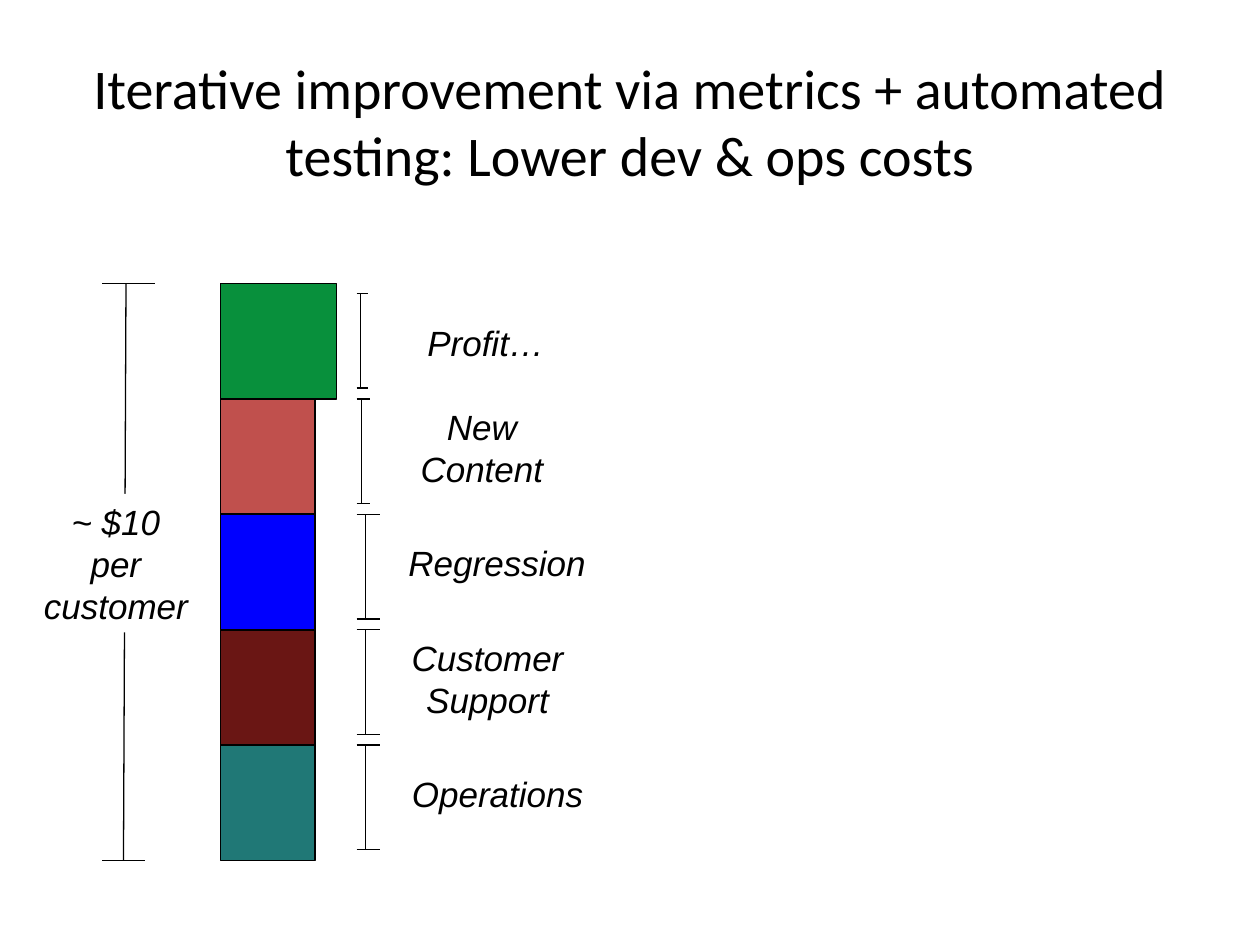
from pptx import Presentation
from pptx.dml.color import RGBColor
from pptx.enum.shapes import MSO_CONNECTOR, MSO_SHAPE
from pptx.enum.text import MSO_ANCHOR, MSO_AUTO_SIZE, PP_ALIGN
from pptx.oxml.ns import qn
from pptx.util import Inches, Pt
from lxml.etree import SubElement

BLACK = "000000"
WHITE = "FFFFFF"

# name lines, label fill, bar colour, bar width, label box,
# bracket (stem x, cap right, offset of its top, length)
COSTS = [
    (["Profit…"], None, "08903C", 0.92, (3.29, 2.5, 1.13, 0.43), (2.86, 2.92, 0.08, 0.75)),
    (["New", "Content"], WHITE, "C0504D", 0.75, (3.24, 3.17, 1.17, 0.77), (2.87, 2.94, 0, 0.83)),
    (["Regression"], None, "0000FF", 0.75, (3.14, 4.25, 1.61, 0.43), (2.9, 3.02, 0, 0.83)),
    (["Customer", "Support"], None, "6A1614", 0.75, (3.17, 5, 1.4, 0.77), (2.9, 3.02, 0, 0.83)),
    (["Operations"], None, "207876", 0.75, (3.17, 6.08, 1.56, 0.43), (2.9, 3.02, 0, 0.83)),
]


def color(value):
    return RGBColor.from_string(value)


def add_paragraphs(frame, lines, font, size, italic=False):
    for index, line in enumerate(lines):
        paragraph = frame.add_paragraph() if index else frame.paragraphs[0]
        paragraph.alignment = PP_ALIGN.CENTER
        run = paragraph.add_run()
        run.text = line
        run.font.name = font
        run.font.size = Pt(size)
        run.font.italic = italic
        run.font.color.rgb = color(BLACK)


def add_rectangle(slide, box, fill, outline=None):
    shape = slide.shapes.add_shape(MSO_SHAPE.RECTANGLE, *map(Inches, box))
    shape.shadow.inherit = False
    shape.fill.solid()
    shape.fill.fore_color.rgb = color(fill)
    if outline:
        shape.line.color.rgb = color(outline)
        shape.line.width = Pt(1)
    else:
        shape.line.fill.background()
    return shape


def add_label(slide, box, lines, fill=None):
    if fill:
        shape = add_rectangle(slide, box, fill)
    else:
        shape = slide.shapes.add_textbox(*map(Inches, box))
    frame = shape.text_frame
    frame.word_wrap = False
    frame.auto_size = MSO_AUTO_SIZE.SHAPE_TO_FIT_TEXT
    frame.vertical_anchor = MSO_ANCHOR.TOP
    frame.margin_left = frame.margin_right = 0
    add_paragraphs(frame, lines, "Arial", 20, italic=True)


def add_line(slide, x1, y1, x2, y2):
    ends = map(Inches, (x1, y1, x2, y2))
    line = slide.shapes.add_connector(MSO_CONNECTOR.STRAIGHT, *ends)
    line.line.color.rgb = color(BLACK)
    line.line.width = Pt(0.75)
    SubElement(line._element.spPr, qn("a:effectLst"))


def add_bracket(slide, left, top, bottom, stem, caps):
    """Draw a stem (top x, bottom x) with end caps (top right, bottom right)."""
    add_line(slide, stem[0], top, stem[1], bottom)
    add_line(slide, left, bottom, caps[1], bottom)
    add_line(slide, left, top, caps[0], top)


def add_title(slide, box):
    frame = slide.shapes.add_textbox(*map(Inches, box)).text_frame
    frame.word_wrap = True
    frame.vertical_anchor = MSO_ANCHOR.MIDDLE
    title = "Iterative improvement via metrics + automated testing: Lower dev & ops costs"
    add_paragraphs(frame, [title], "Calibri", 32)


def add_total(slide, left, top, height):
    add_bracket(slide, left, top, top + height, (1, 0.98), (1.23, 1.15))
    add_label(slide, (0.25, 3.92, 1.34, 1.1), ["~ $10", "per", "customer"], WHITE)


def add_cost_stack(slide, left, top, height):
    band = height / len(COSTS)
    for index, (lines, label_fill, fill, width, label, bracket) in enumerate(COSTS):
        bar_top = top + index * band
        stem, cap, offset, length = bracket
        start = bar_top + offset
        add_rectangle(slide, (left, bar_top, width, band), fill, BLACK)
        add_bracket(slide, 2.83, start, start + length, (stem, stem), (cap, cap))
        add_label(slide, label, lines, label_fill)


def main():
    presentation = Presentation()
    presentation.slide_width = Inches(10)
    presentation.slide_height = Inches(7.5)
    slide = presentation.slides.add_slide(presentation.slide_layouts[6])

    # Heading
    add_title(slide, (0.5, 0.33, 9, 1.25))
    # Total cost on the left, its breakdown on the right
    add_total(slide, 0.81, 2.25, 4.58)
    add_cost_stack(slide, 1.75, 2.25, 4.58)

    presentation.save("out.pptx")


if __name__ == "__main__":
    main()
